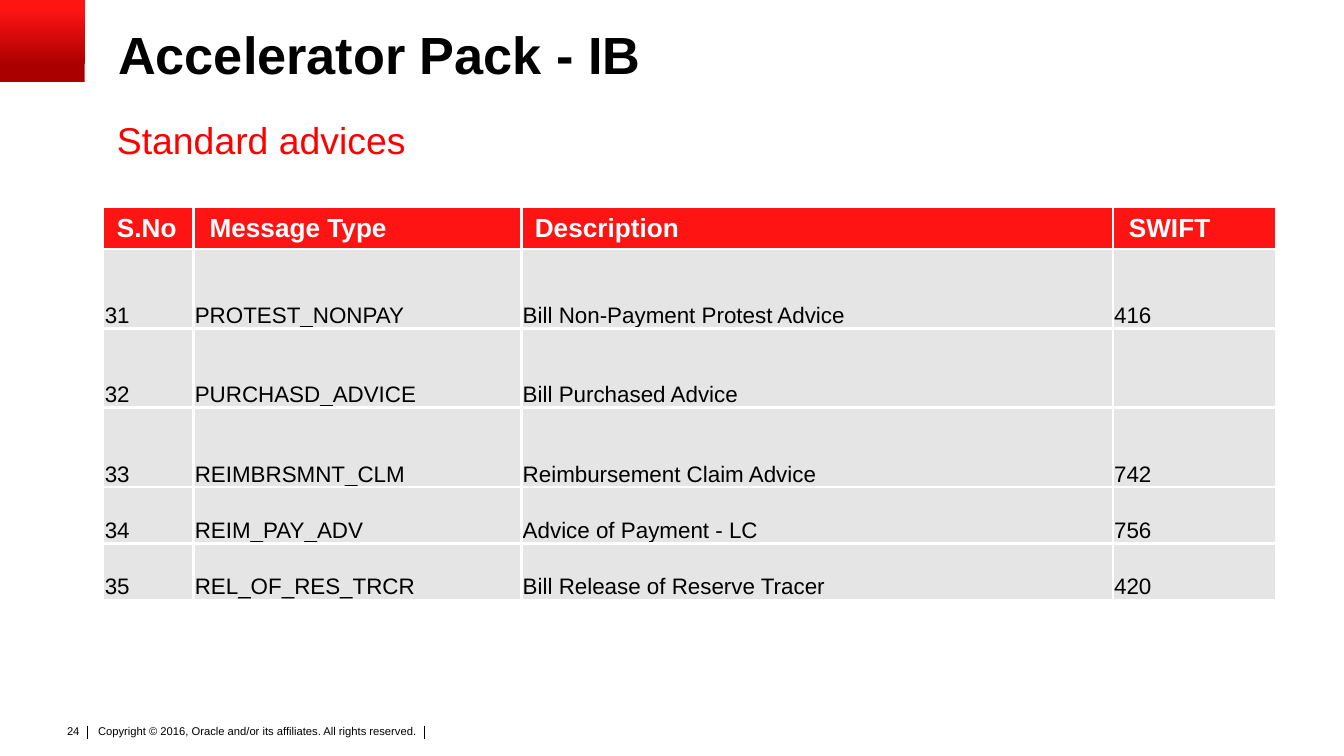
from dataclasses import dataclass

from lxml.etree import SubElement
from pptx import Presentation
from pptx.dml.color import RGBColor
from pptx.enum.shapes import MSO_CONNECTOR as Connector, MSO_SHAPE as Shape
from pptx.enum.text import MSO_ANCHOR as Anchor, PP_ALIGN as Align
from pptx.oxml.ns import qn
from pptx.util import Inches, Pt

COLORS = {
    "black": "000000",
    "white": "FFFFFF",
    "red": "FF0000",
    "header": "FF1414",
    "dark_red": "AA0000",
    "row": "E5E5E5",
}


def rgb(name: str) -> RGBColor:
    return RGBColor.from_string(COLORS[name])


@dataclass(frozen=True)
class Column:
    heading: str
    width: float
    indent: float = 0.1


@dataclass(frozen=True)
class Advice:
    number: str
    message_type: str
    description: str
    swift: str
    height: float

    def texts(self) -> list[str]:
        return [self.number, self.message_type, self.description, self.swift]


COLUMNS = [
    Column("S.No", 0.67),
    Column("Message Type", 2.44, indent=0.12),
    Column("Description", 4.4),
    Column("SWIFT", 1.21, indent=0.12),
]
ADVICES = [
    Advice("31", "PROTEST_NONPAY", "Bill Non-Payment Protest Advice", "416", 0.59),
    Advice("32", "PURCHASD_ADVICE", "Bill Purchased Advice", "", 0.59),
    Advice("33", "REIMBRSMNT_CLM", "Reimbursement Claim Advice", "742", 0.59),
    Advice("34", "REIM_PAY_ADV", "Advice of Payment - LC", "756", 0.42),
    Advice("35", "REL_OF_RES_TRCR", "Bill Release of Reserve Tracer", "420", 0.42),
]
HEADER_HEIGHT = 0.31


def write(frame, text: str, *, size: float, color: str = "black", bold: bool = False,
          align: Align = Align.LEFT, spacing: float = 1.0) -> None:
    paragraph = frame.paragraphs[0]
    paragraph.alignment = align
    paragraph.line_spacing = spacing
    if text:
        paragraph.add_run().text = text
    for font in [paragraph.font] + [run.font for run in paragraph.runs]:
        font.name = "Arial"
        font.size = Pt(size)
        font.bold = bold
        font.color.rgb = rgb(color)


def set_margins(target, left: float, top: float, right: float, bottom: float) -> None:
    target.margin_left, target.margin_top = Inches(left), Inches(top)
    target.margin_right, target.margin_bottom = Inches(right), Inches(bottom)


def add_text(slide, text: str, box: tuple, margins: tuple = (0, 0, 0, 0),
             wrap: bool = True, **style) -> None:
    frame = slide.shapes.add_textbox(*map(Inches, box)).text_frame
    frame.word_wrap = wrap
    set_margins(frame, *margins)
    write(frame, text, **style)


def add_corner_block(slide) -> None:
    block = slide.shapes.add_shape(Shape.RECTANGLE, 0, 0, Inches(0.63), Inches(0.61))
    block.shadow.inherit = False
    block.line.fill.background()
    block.fill.gradient()
    block.fill.gradient_angle = 90
    stops = [(0.2, "dark_red"), (0.9, "header")]
    for stop, (position, color) in zip(block.fill.gradient_stops, stops):
        stop.position = position
        stop.color.rgb = rgb(color)


def add_divider(slide, x: float) -> None:
    divider = slide.shapes.add_connector(
        Connector.STRAIGHT, Inches(x), Inches(5.4), Inches(x), Inches(5.5))
    divider.line.color.rgb = rgb("black")
    divider.line.width = Pt(0.5)
    SubElement(divider._element.spPr, qn("a:effectLst"))


def paint_cell(cell, fill: str, row: int, column: int) -> None:
    """Add white inner borders, which must precede the fill in the XML."""
    inner_sides = {
        "a:lnL": column > 0,
        "a:lnR": column < len(COLUMNS) - 1,
        "a:lnT": row > 0,
        "a:lnB": row < len(ADVICES),
    }
    properties = cell._tc.get_or_add_tcPr()
    for side, is_inner in inner_sides.items():
        if is_inner:
            border = SubElement(properties, qn(side), w=str(Pt(1.5)))
            solid = SubElement(border, qn("a:solidFill"))
            SubElement(solid, qn("a:srgbClr"), val=COLORS["white"])
    cell.fill.solid()
    cell.fill.fore_color.rgb = rgb(fill)


def add_advice_table(slide) -> None:
    heights = [HEADER_HEIGHT] + [advice.height for advice in ADVICES]
    width = sum(column.width for column in COLUMNS)
    table = slide.shapes.add_table(
        len(heights), len(COLUMNS), Inches(0.77), Inches(1.54),
        Inches(width), Inches(sum(heights))).table
    table.horz_banding = False
    for row, height in zip(table.rows, heights):
        row.height = Inches(height)

    for index, column in enumerate(COLUMNS):
        table.columns[index].width = Inches(column.width)
        heading = table.cell(0, index)
        paint_cell(heading, "header", 0, index)
        set_margins(heading, column.indent, 0.04, 0.1, 0.04)
        heading.vertical_anchor = Anchor.MIDDLE
        write(heading.text_frame, column.heading, size=14, color="white", bold=True)

    for row_index, advice in enumerate(ADVICES, start=1):
        for index, text in enumerate(advice.texts()):
            cell = table.cell(row_index, index)
            paint_cell(cell, "row", row_index, index)
            set_margins(cell, 0.01, 0.01, 0.01, 0)
            cell.vertical_anchor = Anchor.BOTTOM
            write(cell.text_frame, text, size=12)


def main() -> None:
    deck = Presentation()
    deck.slide_width = Inches(10)
    deck.slide_height = deck.slide_width * 9 // 16
    slide = deck.slides.add_slide(deck.slide_layouts[6])

    add_text(slide, "Copyright © 2016, Oracle and/or its affiliates. All rights reserved.",
             (0.69, 5.37, 2.74, 0.24), margins=(0.04, 0.02, 0.04, 0.02), size=6)
    for x in (0.65, 3.16):
        add_divider(slide, x)
    add_text(slide, "24", (0.39, 5.34, 0.3, 0.2), margins=(0.1, 0.05, 0.1, 0.05),
             wrap=False, size=6, align=Align.RIGHT)
    add_corner_block(slide)
    add_text(slide, "Standard advices", (0.87, 0.87, 9, 0.33), size=20, color="red")
    add_text(slide, "Accelerator Pack - IB", (0.88, 0.22, 8.5, 0.83),
             size=28, bold=True, spacing=0.9)
    add_advice_table(slide)

    deck.save("out.pptx")


if __name__ == "__main__":
    main()
